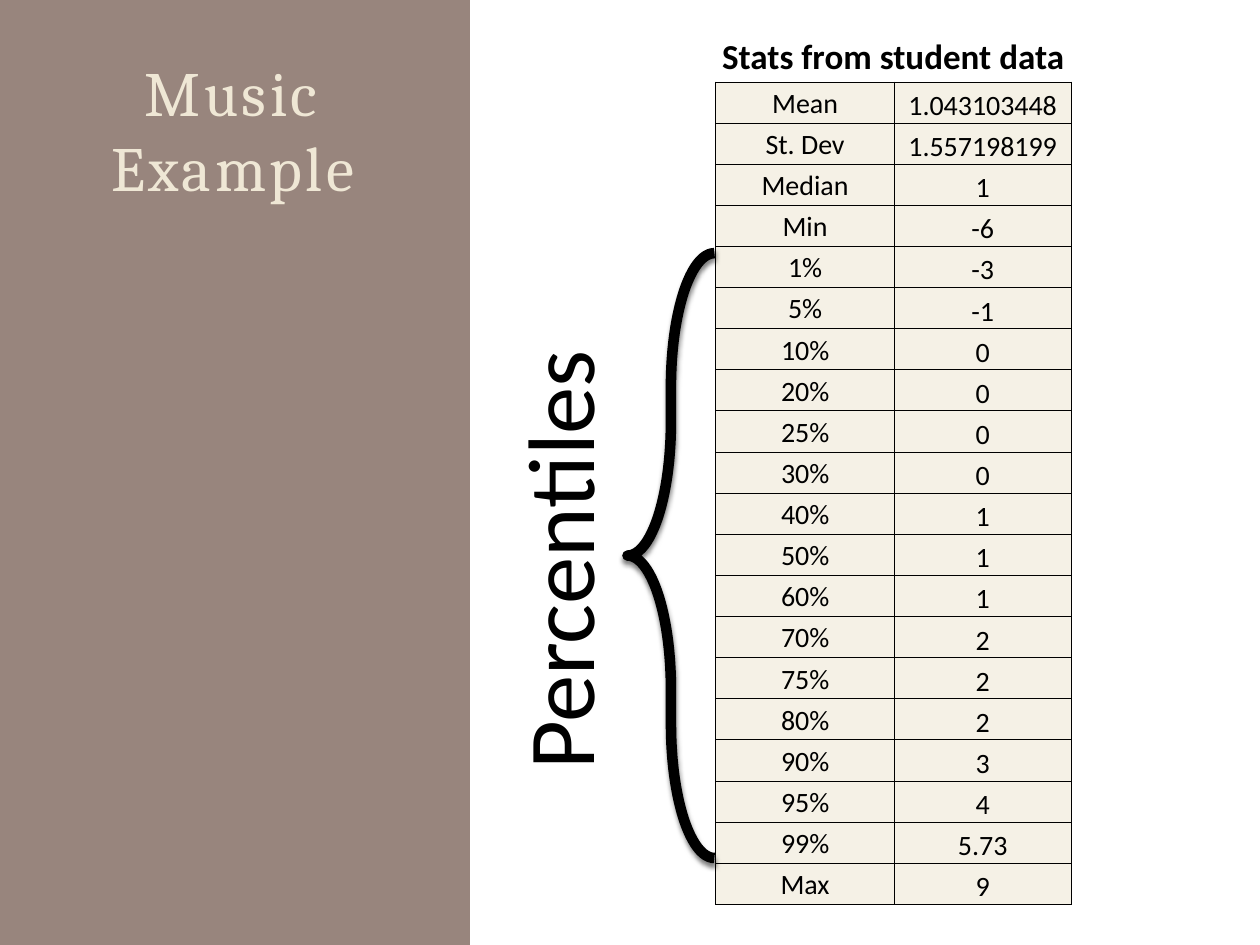
"""Builds the Music Example slide with a table of student statistics."""
from lxml import etree
from pptx import Presentation
from pptx import util as u
from pptx.dml import color
from pptx.enum import shapes, text
from pptx.oxml import ns

COLORS = {"panel": "785F55", "title": "EFE7D5", "cell": "F5F1E6", "black": "000000"}
STATS = [
    ("Mean", "1.043103448"), ("St. Dev", "1.557198199"), ("Median", "1"), ("Min", "-6"),
    ("1%", "-3"), ("5%", "-1"), ("10%", "0"), ("20%", "0"), ("25%", "0"),
    ("30%", "0"), ("40%", "1"), ("50%", "1"), ("60%", "1"), ("70%", "2"),
    ("75%", "2"), ("80%", "2"), ("90%", "3"), ("95%", "4"), ("99%", "5.73"), ("Max", "9"),
]
HEADER_HEIGHT = 0.4
TABLE_HEIGHT = 6.93
NO_GRID_STYLE = "{2D5ABB26-0587-4C30-8999-92F81FD0307C}"


def rgb(name):
    return color.RGBColor.from_string(COLORS[name])


def add_element(parent, tag, **attributes):
    element = etree.SubElement(parent, ns.qn(tag))
    for key, value in attributes.items():
        element.set(key, str(value))
    return element


def add_color(parent, name, alpha=100):
    value = add_element(parent, "a:srgbClr", val=COLORS[name])
    add_element(value, "a:alpha", val=alpha * 1000)


def write_text(text_frame, content, size, font_name="Calibri", color_name="black", bold=False):
    text_frame.text = content
    paragraph = text_frame.paragraphs[0]
    paragraph.alignment = text.PP_ALIGN.CENTER
    font = paragraph.runs[0].font
    font.size, font.name, font.bold = u.Pt(size), font_name, bold
    font.color.rgb = rgb(color_name)
    return font


def add_panel(slide):
    panel = slide.shapes.add_shape(shapes.MSO_SHAPE.RECTANGLE, 0, 0, u.Inches(3.73), u.Inches(7.5))
    panel.shadow.inherit = False
    panel.fill.solid()
    panel.fill.fore_color.rgb = rgb("panel")
    value = panel.fill._xPr.find(".//" + ns.qn("a:srgbClr"))
    add_element(value, "a:alpha", val=76000)
    panel.line.fill.background()


def add_label(slide, left, top, width, height):
    label = slide.shapes.add_textbox(*map(u.Inches, (left, top, width, height)))
    label.text_frame.word_wrap = True
    return label.text_frame


def add_title(slide):
    text_frame = add_label(slide, 0.3, 0.25, 3.1, 1.42)
    text_frame.vertical_anchor = text.MSO_ANCHOR.BOTTOM
    font = write_text(text_frame, "Music Example", 36, "Cambria", "title")
    font._rPr.set("spc", "200")


def add_vertical_label(slide):
    text_frame = add_label(slide, 3.92, 1.91, 1.11, 4.9)
    text_frame._txBody.bodyPr.set("vert", "vert270")
    write_text(text_frame, "Percentiles ", 54)


def add_brace(slide):
    box = map(u.Inches, (4.98, 2.01, 0.69, 4.8))
    brace = slide.shapes.add_shape(shapes.MSO_SHAPE.LEFT_BRACE, *box)
    brace.adjustments[0], brace.adjustments[1] = 1.54, 0.5
    brace.fill.background()
    brace.line.color.rgb = rgb("black")
    brace.line.width = u.Pt(6)
    brace.shadow.inherit = False
    effects = brace._element.spPr.find(ns.qn("a:effectLst"))
    shadow = add_element(effects, "a:outerShdw", blurRad=u.Pt(2.5), dist=u.Pt(2),
                         dir=90 * 60000, rotWithShape=0)
    add_color(shadow, "black", 50)


def add_borders(cell, sides):
    for side in sides:
        line = add_element(cell._tc.get_or_add_tcPr(), f"a:ln{side}", w=u.Pt(0.5))
        add_color(add_element(line, "a:solidFill"), "black")


def fill_cell(cell, content, size, anchor, bold=False):
    cell.margin_left = cell.margin_right = cell.margin_top = u.Inches(0.02)
    cell.margin_bottom = 0
    cell.vertical_anchor = anchor
    write_text(cell.text_frame, content, size, bold=bold)


def add_stats_table(slide):
    box = map(u.Inches, (5.68, 0.25, 2.82, TABLE_HEIGHT))
    table = slide.shapes.add_table(len(STATS) + 1, 2, *box).table
    table.first_row = table.horz_banding = False
    table._tbl.tblPr.find(ns.qn("a:tableStyleId")).text = NO_GRID_STYLE
    for column, width in zip(table.columns, (1.42, 1.4)):
        column.width = u.Inches(width)
    for row in table.rows:
        row.height = u.Inches((TABLE_HEIGHT - HEADER_HEIGHT) / len(STATS))
    table.rows[0].height = u.Inches(HEADER_HEIGHT)

    header = table.cell(0, 0)
    header.merge(table.cell(0, 1))
    fill_cell(header, "Stats from student data", 20, text.MSO_ANCHOR.MIDDLE, bold=True)
    for column_index in range(2):
        cell = table.cell(0, column_index)
        add_borders(cell, "B")
        cell.fill.background()

    anchors = (text.MSO_ANCHOR.MIDDLE, text.MSO_ANCHOR.BOTTOM)
    for row_index, values in enumerate(STATS, 1):
        for column_index, (value, anchor) in enumerate(zip(values, anchors)):
            cell = table.cell(row_index, column_index)
            fill_cell(cell, value, 16, anchor)
            add_borders(cell, "LRTB")
            cell.fill.solid()
            cell.fill.fore_color.rgb = rgb("cell")


def main():
    presentation = Presentation()
    presentation.slide_width, presentation.slide_height = u.Inches(10), u.Inches(7.5)
    slide = presentation.slides.add_slide(presentation.slide_layouts[6])
    add_panel(slide)
    add_title(slide)
    add_stats_table(slide)
    add_brace(slide)
    add_vertical_label(slide)
    presentation.save("out.pptx")


if __name__ == "__main__":
    main()
